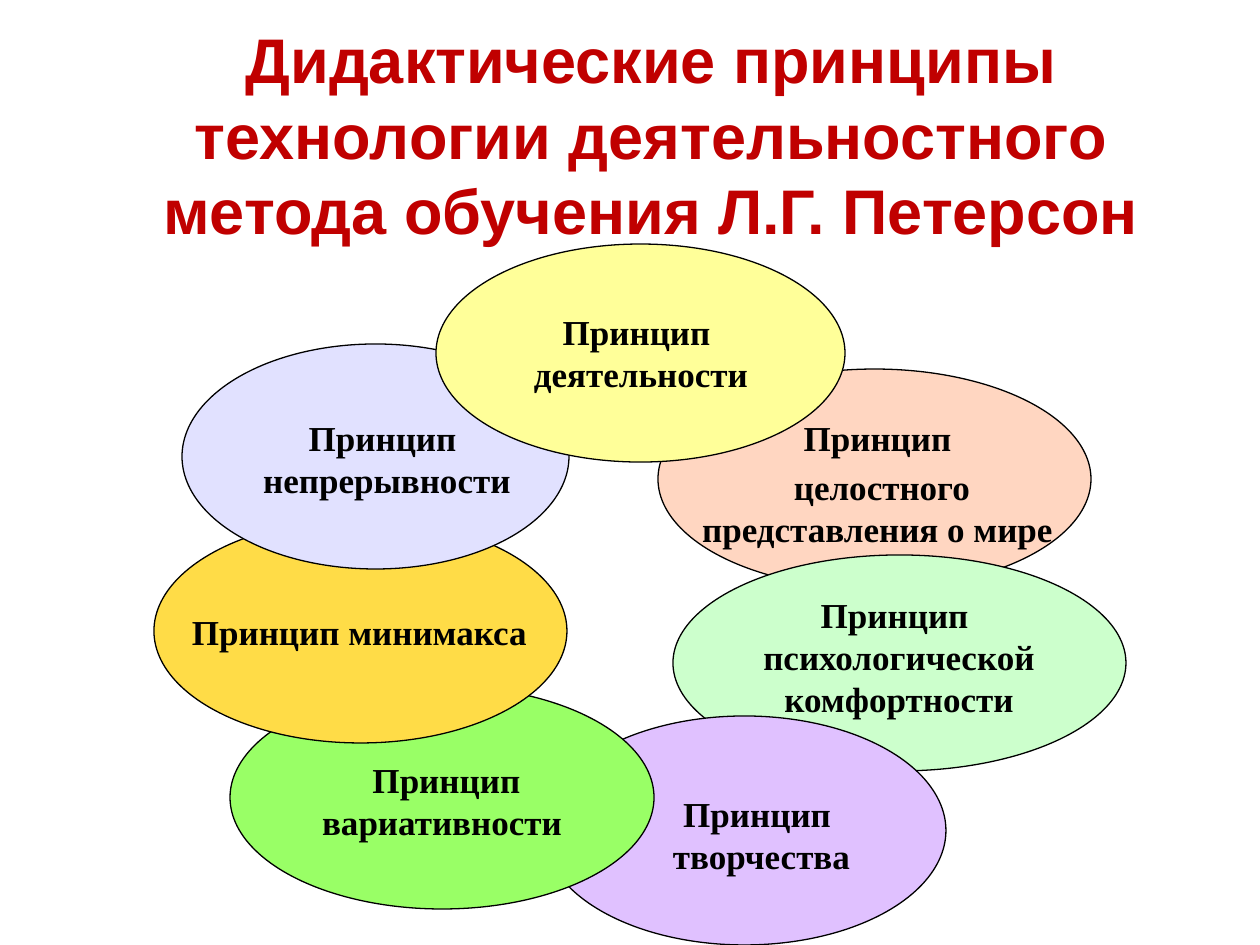
from pptx import Presentation
from pptx import util as u
from pptx.dml.color import RGBColor
from pptx.enum import shapes, text

SCALE = 914400 / 126
HEX = {
    "title": "C00000", "ink": "000000", "peach": "FFD6C1", "mint": "CCFFCC",
    "lilac": "E0C1FF", "green": "99FF66", "gold": "FFDC47",
    "blue": "E1E1FF", "yellow": "FFFF99",
}
WHOLE = ((654, 410, 447, 220), ["Принцип", " целостного представления о мире"])
RING = [
    ("peach", (658, 369, 433, 220), None),
    ("mint", (673, 555, 453, 216),
     ((707, 587, 384, 203), ["Принцип ", "психологической комфортности"])),
    ("lilac", (543, 716, 403, 229),
     ((606, 786, 311, 125), ["Принцип ", "творчества"])),
    ("green", (230, 686, 424, 223),
     ((230, 752, 424, 156), [" Принцип вариативности"])),
    ("gold", (154, 519, 413, 224),
     ((166, 604, 387, 146), ["Принцип минимакса"])),
    ("blue", (182, 344, 387, 225),
     ((193, 410, 388, 138), ["Принцип ", "непрерывности"])),
    ("yellow", (436, 244, 409, 218),
     ((491, 304, 300, 171), ["Принцип ", "деятельности"])),
]


def px(*nums):
    """Turn pixel lengths into EMU."""
    return [u.Emu(round(n * SCALE)) for n in nums]


def rgb(name):
    """Look up a named colour."""
    return RGBColor.from_string(HEX[name])


def put(para, words, face, size, hue):
    """Add one bold centred run to a paragraph."""
    para.alignment = text.PP_ALIGN.CENTER
    run = para.add_run()
    run.text = words
    font = run.font
    font.name, font.size, font.bold = face, u.Pt(size), True
    font.color.rgb = rgb(hue)


def head(slide, box, words):
    """Place and format the title."""
    title = slide.shapes.title
    title.left, title.top, title.width, title.height = px(*box)
    frame = title.text_frame
    frame.word_wrap = True
    frame.auto_size = text.MSO_AUTO_SIZE.NONE
    frame.vertical_anchor = text.MSO_ANCHOR.MIDDLE
    put(frame.paragraphs[0], words, "Arial", 36, "title")


def oval(slide, box, hue):
    """Draw one outlined ellipse."""
    shape = slide.shapes.add_shape(shapes.MSO_SHAPE.OVAL, *px(*box))
    shape.shadow.inherit = False
    shape.fill.solid()
    shape.fill.fore_color.rgb = rgb(hue)
    shape.line.color.rgb = rgb("ink")
    shape.line.width = u.Pt(0.75)


def label(slide, box, lines, gap=0):
    """Write the name of one principle."""
    frame = slide.shapes.add_textbox(*px(*box)).text_frame
    frame.word_wrap = True
    for i, line in enumerate(lines):
        para = frame.add_paragraph() if i else frame.paragraphs[0]
        if i and gap:
            para.space_before = u.Pt(gap)
        put(para, line, "Times New Roman", 20, "ink")


def main():
    """Build and save the slide."""
    deck = Presentation()
    deck.slide_width, deck.slide_height = px(1260, 945)
    slide = deck.slides.add_slide(deck.slide_layouts[5])
    head(slide, (84, 55, 1134, 158),
         "Дидактические принципы технологии деятельностного "
         "метода обучения Л.Г. Петерсон")
    for hue, box, name in RING:
        oval(slide, box, hue)
        if name:
            label(slide, *name)
    label(slide, *WHOLE, gap=4)
    deck.save("out.pptx")


if __name__ == "__main__":
    main()
